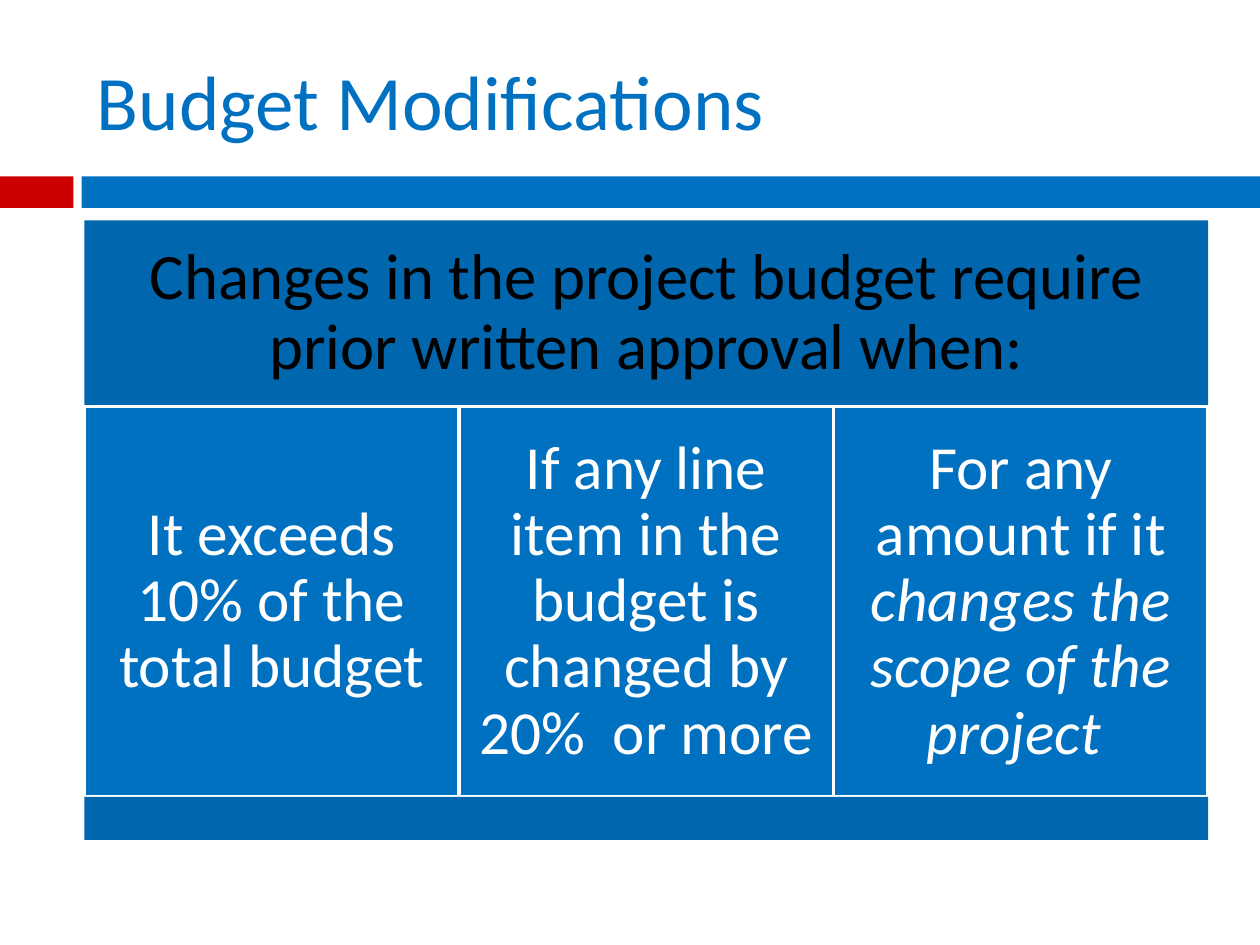
from typing import NamedTuple

from pptx import Presentation
from pptx.dml.color import RGBColor
from pptx.enum.shapes import MSO_SHAPE as Shape
from pptx.enum.text import MSO_ANCHOR as Anchor, PP_ALIGN as Align
from pptx.util import Pt

COLORS = {
    "red": "CC0000",
    "blue": "0070C0",
    "dark_blue": "0066AE",
    "white": "FFFFFF",
    "black": "000000",
}
FONT = "Calibri"
LEFT, WIDTH = 48.2, 642.2
HEADER_TOP, COLUMN_TOP, FOOTER_TOP = 126, 232.4, 455.4


class Block(NamedTuple):
    left: float
    top: float
    width: float
    height: float
    fill: str
    outlined: bool = False


class Criterion(NamedTuple):
    plain: str
    emphasis: str = ""


CRITERIA = [
    Criterion("It exceeds 10% of the total budget"),
    Criterion("If any line item in the budget is changed by 20%  or more "),
    Criterion("For any amount if it ", "changes the scope of the project "),
]


def color(name: str) -> RGBColor:
    return RGBColor.from_string(COLORS[name])


def style_font(font, size: float, color_name: str) -> None:
    font.name = FONT
    font.size = Pt(size)
    font.color.rgb = color(color_name)


def add_block(page, block: Block):
    shape = page.shapes.add_shape(
        Shape.RECTANGLE, Pt(block.left), Pt(block.top), Pt(block.width), Pt(block.height)
    )
    shape.shadow.inherit = False
    shape.fill.solid()
    shape.fill.fore_color.rgb = color(block.fill)
    if block.outlined:
        shape.line.color.rgb = color("white")
        shape.line.width = Pt(2)
    else:
        shape.line.fill.background()
    return shape


def write_text(shape, text: Criterion, size: float, color_name: str) -> None:
    frame = shape.text_frame
    frame.word_wrap = True
    frame.vertical_anchor = Anchor.MIDDLE
    frame.margin_left = frame.margin_right = Pt(10.8)
    frame.margin_top = frame.margin_bottom = Pt(10.8)
    para = frame.paragraphs[0]
    para.text = text.plain
    para.alignment = Align.CENTER
    para.line_spacing = 0.9
    if text.emphasis:
        span = para.add_run()
        span.text = text.emphasis
        span.font.italic = True
    for span in para.runs:
        style_font(span.font, size, color_name)


def add_title(page, text: str) -> None:
    title = page.shapes.title
    title.left, title.top = Pt(LEFT), Pt(18)
    title.width, title.height = Pt(WIDTH), Pt(78)
    frame = title.text_frame
    frame.text = text
    frame.word_wrap = True
    frame.vertical_anchor = Anchor.MIDDLE
    para = frame.paragraphs[0]
    para.alignment = Align.LEFT
    style_font(para.runs[0].font, 44, "blue")


def main() -> None:
    deck = Presentation()
    deck.slide_width, deck.slide_height = Pt(720), Pt(540)
    page = deck.slides.add_slide(deck.slide_layouts[5])

    add_block(page, Block(0, 100.8, 42, 18, "red"))
    add_block(page, Block(46.6, 100.8, 673.4, 18, "blue"))
    add_title(page, "Budget Modifications")

    header = add_block(
        page, Block(LEFT, HEADER_TOP, WIDTH, COLUMN_TOP - HEADER_TOP, "dark_blue")
    )
    heading = Criterion("Changes in the project budget require prior written approval when:")
    write_text(header, heading, 37, "black")

    column_width = WIDTH / len(CRITERIA)
    for index, criterion in enumerate(CRITERIA):
        column = add_block(
            page,
            Block(LEFT + index * column_width, COLUMN_TOP, column_width,
                  FOOTER_TOP - COLUMN_TOP, "blue", outlined=True),
        )
        write_text(column, criterion, 35, "white")

    add_block(page, Block(LEFT, FOOTER_TOP, WIDTH, 24.6, "dark_blue"))
    deck.save("out.pptx")


if __name__ == "__main__":
    main()
